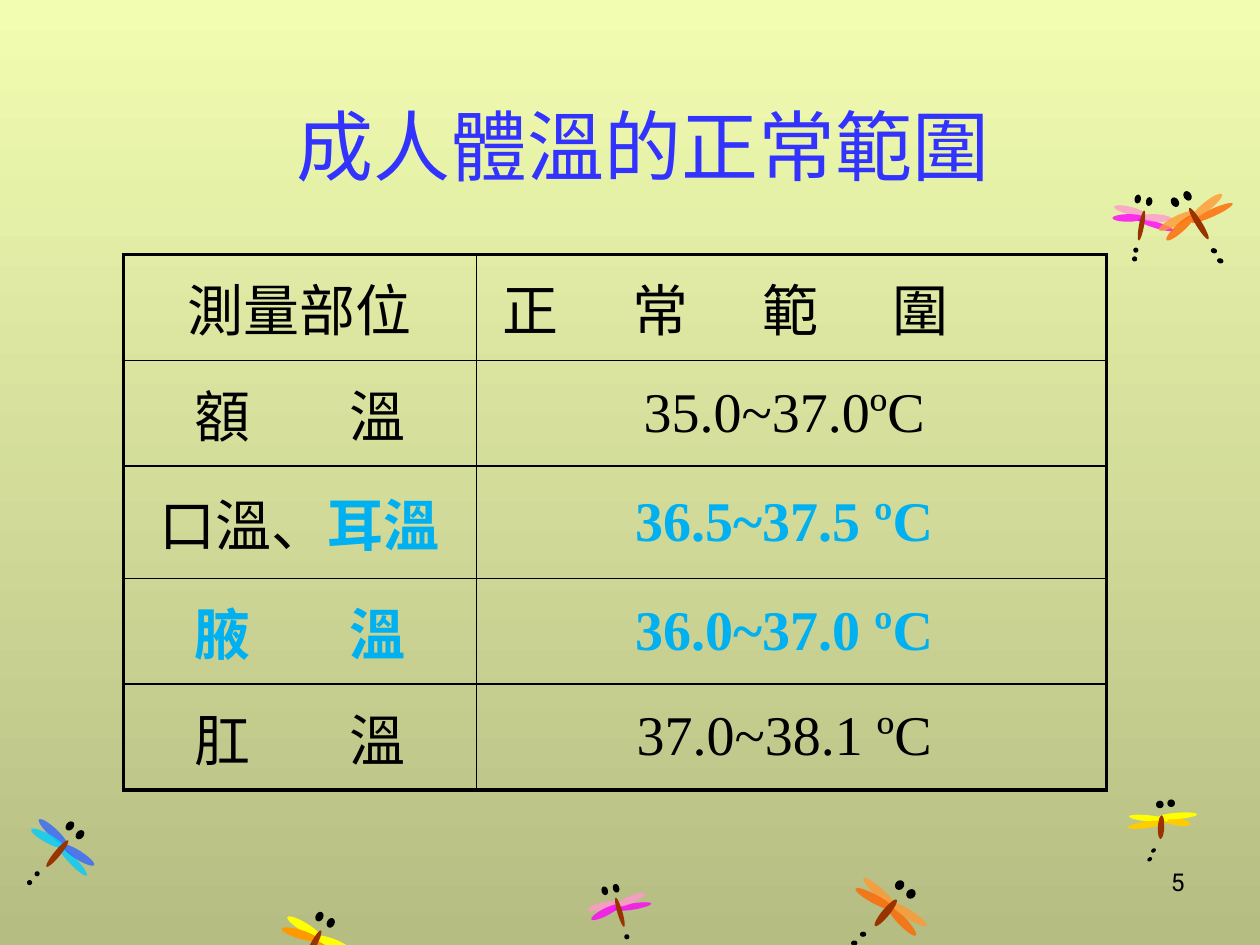
from dataclasses import dataclass

from lxml import etree
from pptx import Presentation
from pptx import util as u
from pptx.dml.color import RGBColor
from pptx.enum import shapes, text
from pptx.oxml import ns

Inches, Pt = u.Inches, u.Pt
Pair = tuple[float, float]

BLACK = RGBColor(0, 0, 0)
TITLE_BLUE = RGBColor(0x33, 0x33, 0xFF)
SKY = RGBColor(0x00, 0xB0, 0xF0)
BROWN = RGBColor(0x99, 0x33, 0x00)
MAGENTA = RGBColor(0xFF, 0x00, 0xFF)
PINK = RGBColor(0xFF, 0x99, 0xCC)
ORANGE = RGBColor(0xFF, 0x99, 0x00)
YELLOW = RGBColor(0xFF, 0xFF, 0x00)
GOLD = RGBColor(0xFF, 0xCC, 0x00)
CYAN = RGBColor(0x00, 0xCC, 0xFF)
BLUE = RGBColor(0x33, 0x66, 0xFF)
DEEP_ORANGE = RGBColor(0xFF, 0x66, 0x00)
LIGHT_ORANGE = RGBColor(0xFF, 0x99, 0x33)
BACKGROUND_TOP = RGBColor(0xF2, 0xFD, 0xB1)
BACKGROUND_BOTTOM = RGBColor(0xB5, 0xBD, 0x83)
SERIF = "Times New Roman"

# Turn of each part relative to the body: four wings, body, eyes, tail dots
PART_TURNS = (7, 172.9, 183.1, -10.9, 0, 0, 0, -39.4, -39.4)


@dataclass
class Dragonfly:
    angle: float
    lower_colour: RGBColor
    upper_colour: RGBColor
    see_through: bool
    sizes: tuple[Pair, ...]  # first wing, other wings, body, eye, tail dot
    places: tuple[Pair, ...]  # in the order of PART_TURNS


@dataclass
class Phrase:
    text: str
    highlighted: bool = False
    spacing: float = 0  # points after every character but the last


SMALL = ((0.3, 0.05), (0.25, 0.06), (0.04, 0.24), (0.04, 0.06), (0.03, 0.03))
MEDIUM = ((0.33, 0.06), (0.3, 0.07), (0.05, 0.27), (0.05, 0.07), (0.03, 0.03))
FLAT = ((0.23, 0.06), (0.31, 0.05), (0.05, 0.19), (0.05, 0.05), (0.03, 0.02))
WIDE = ((0.33, 0.07), (0.34, 0.07), (0.06, 0.27), (0.06, 0.07), (0.04, 0.03))
LONG = ((0.36, 0.06), (0.3, 0.07), (0.05, 0.29), (0.05, 0.07), (0.03, 0.04))

DRAGONFLIES = (
    Dragonfly(10.4, MAGENTA, PINK, True, SMALL, (
        (9.02, 1.76), (9.05, 1.7), (8.84, 1.64), (8.83, 1.7), (9.04, 1.67),
        (9.01, 1.55), (9.1, 1.57), (9, 1.97), (8.99, 2.04))),
    Dragonfly(-16.1, MAGENTA, PINK, True, SMALL, (
        (4.87, 7.17), (4.88, 7.11), (4.66, 7.16), (4.68, 7.21), (4.9, 7.12),
        (4.78, 7.04), (4.87, 7.02), (4.96, 7.42))),
    Dragonfly(27.6, ORANGE, YELLOW, False, MEDIUM, (
        (2.44, 7.51), (2.49, 7.45), (2.26, 7.32), (2.23, 7.38), (2.46, 7.37),
        (2.51, 7.24), (2.6, 7.29))),
    Dragonfly(39.4, CYAN, BLUE, True, MEDIUM, (
        (0.41, 6.8), (0.47, 6.75), (0.27, 6.57), (0.23, 6.62), (0.43, 6.64),
        (0.53, 6.52), (0.61, 6.59), (0.28, 6.92), (0.22, 6.99))),
    Dragonfly(2.8, GOLD, YELLOW, False, FLAT, (
        (9.22, 6.49), (9.19, 6.45), (8.96, 6.47), (8.95, 6.52), (9.19, 6.47),
        (9.18, 6.36), (9.27, 6.35), (9.14, 6.74), (9.11, 6.81))),
    Dragonfly(39.4, DEEP_ORANGE, LIGHT_ORANGE, True, WIDE, (
        (6.99, 7.27), (7.04, 7.22), (6.81, 7.05), (6.77, 7.1), (7, 7.11),
        (7.11, 6.99), (7.2, 7.06), (6.83, 7.4), (6.76, 7.47))),
    Dragonfly(-31.4, DEEP_ORANGE, LIGHT_ORANGE, True, LONG, (
        (9.44, 1.66), (9.43, 1.6), (9.18, 1.72), (9.22, 1.77), (9.49, 1.63),
        (9.3, 1.57), (9.4, 1.52), (9.62, 1.97), (9.67, 2.05))),
)

SITE_GAP, HEADER_GAP = 24.5, 17.5
COLUMN_WIDTHS = (2.8, 5)
ROW_HEIGHTS = (0.84, 0.84, 0.89, 0.84, 0.84)
TABLE_ROWS = (
    ([Phrase("測量部位")], [Phrase("正 常 範 圍", spacing=HEADER_GAP)]),
    ([Phrase("額 溫", spacing=SITE_GAP)], [Phrase("35.0~37.0ºC ")]),
    ([Phrase("口溫、"), Phrase("耳溫", True)], [Phrase("36.5~37.5 ºC ", True)]),
    ([Phrase("腋 溫", True, SITE_GAP)], [Phrase("36.0~37.0 ºC ", True)]),
    ([Phrase("肛 溫", spacing=SITE_GAP)], [Phrase("37.0~38.1 ºC ")]),
)


def draw_dragonfly(slide, insect: Dragonfly) -> None:
    first_wing, wing, body, eye, dot = insect.sizes
    sizes = (first_wing, wing, wing, wing, body, eye, eye, dot, dot)
    lower, upper = insect.lower_colour, insect.upper_colour
    colours = (lower, upper, upper, lower, BROWN) + (BLACK,) * 4
    group = slide.shapes.add_group_shape()
    parts = zip(insect.places, sizes, PART_TURNS, colours)
    for index, (place, size, turn, colour) in enumerate(parts):
        shape = group.shapes.add_shape(
            shapes.MSO_SHAPE.OVAL, *(Inches(value) for value in place + size))
        shape.rotation = (insect.angle + turn) % 360
        shape.shadow.inherit = False
        shape.fill.solid()
        shape.fill.fore_color.rgb = colour
        if colour == BLACK:
            shape.line.color.rgb = BLACK
            shape.line.width = Pt(0.75)
        else:
            shape.line.fill.background()
        if insect.see_through and index < 4:
            tint = shape.fill._xPr.find(".//" + ns.qn("a:srgbClr"))
            etree.SubElement(tint, ns.qn("a:alpha"), val="80000")


def add_text(slide, box: tuple[float, ...], words: str, size: float, name: str,
             colour: RGBColor, alignment, anchor) -> None:
    shape = slide.shapes.add_textbox(*(Inches(value) for value in box))
    frame = shape.text_frame
    frame.word_wrap = True
    frame.vertical_anchor = anchor
    paragraph = frame.paragraphs[0]
    paragraph.text = words
    paragraph.alignment = alignment
    paragraph.font.size = Pt(size)
    paragraph.font.name = name
    paragraph.font.color.rgb = colour


def write_phrase(paragraph, phrase: Phrase) -> None:
    pieces = [(phrase.text, 0)]
    if phrase.spacing:
        pieces = [(phrase.text[:-1], phrase.spacing), (phrase.text[-1], 0)]
    for words, spacing in pieces:
        run = paragraph.add_run()
        run.text = words
        run.font.bold = phrase.highlighted
        run.font.color.rgb = SKY if phrase.highlighted else BLACK
        if spacing:
            run.font._element.set("spc", str(round(spacing * 100)))


def set_borders(cell, widths: dict[str, float]) -> None:
    properties = cell._tc.get_or_add_tcPr()
    for index, (side, width) in enumerate(widths.items()):
        line = etree.Element(ns.qn("a:ln" + side), w=str(Pt(width)))
        fill = etree.SubElement(line, ns.qn("a:solidFill"))
        etree.SubElement(fill, ns.qn("a:srgbClr"), val=str(BLACK))
        properties.insert(index, line)


def draw_table(slide) -> None:
    last_row, last_column = len(ROW_HEIGHTS) - 1, len(COLUMN_WIDTHS) - 1
    table = slide.shapes.add_table(
        len(ROW_HEIGHTS), len(COLUMN_WIDTHS), Inches(0.98), Inches(2.02),
        Inches(sum(COLUMN_WIDTHS)), Inches(sum(ROW_HEIGHTS))).table
    table.first_row = table.horz_banding = False
    for column, width in zip(table.columns, COLUMN_WIDTHS):
        column.width = Inches(width)
    for row, height in zip(table.rows, ROW_HEIGHTS):
        row.height = Inches(height)
    for r, row_phrases in enumerate(TABLE_ROWS):
        for c, phrases in enumerate(row_phrases):
            cell = table.cell(r, c)
            cell.vertical_anchor = text.MSO_ANCHOR.MIDDLE
            cell.fill.background()
            edges = {"L": c == 0, "R": c == last_column,
                     "T": r == 0, "B": r == last_row}
            set_borders(cell, {side: 2.25 if outer else 1
                               for side, outer in edges.items()})
            paragraph = cell.text_frame.paragraphs[0]
            paragraph.alignment = text.PP_ALIGN.CENTER
            paragraph.space_before = Pt(6.4)
            paragraph.font.size = Pt(32)
            paragraph.font.name = SERIF
            for phrase in phrases:
                write_phrase(paragraph, phrase)
    # The range heading starts at the left, slightly indented
    heading = table.cell(0, 1)
    heading.margin_left = Inches(0.21)
    heading.text_frame.paragraphs[0].alignment = text.PP_ALIGN.LEFT


def main() -> None:
    presentation = Presentation()
    presentation.slide_width, presentation.slide_height = Inches(10), Inches(7.5)
    slide = presentation.slides.add_slide(presentation.slide_layouts[6])

    # Background, from top to bottom
    background = slide.background.fill
    background.gradient()
    background.gradient_angle = 270
    for stop, colour in zip(background.gradient_stops,
                            (BACKGROUND_TOP, BACKGROUND_BOTTOM)):
        stop.color.rgb = colour

    # Decoration
    for insect in DRAGONFLIES:
        draw_dragonfly(slide, insect)

    # Title, table and slide number
    add_text(slide, (0.98, 0.36, 8.25, 1.57), "成人體溫的正常範圍", 44, SERIF,
             TITLE_BLUE, text.PP_ALIGN.CENTER, text.MSO_ANCHOR.MIDDLE)
    draw_table(slide)
    add_text(slide, (7.17, 6.83, 2.33, 0.52), "5", 14, "Roboto",
             BLACK, text.PP_ALIGN.RIGHT, text.MSO_ANCHOR.TOP)

    presentation.save("out.pptx")


if __name__ == "__main__":
    main()
